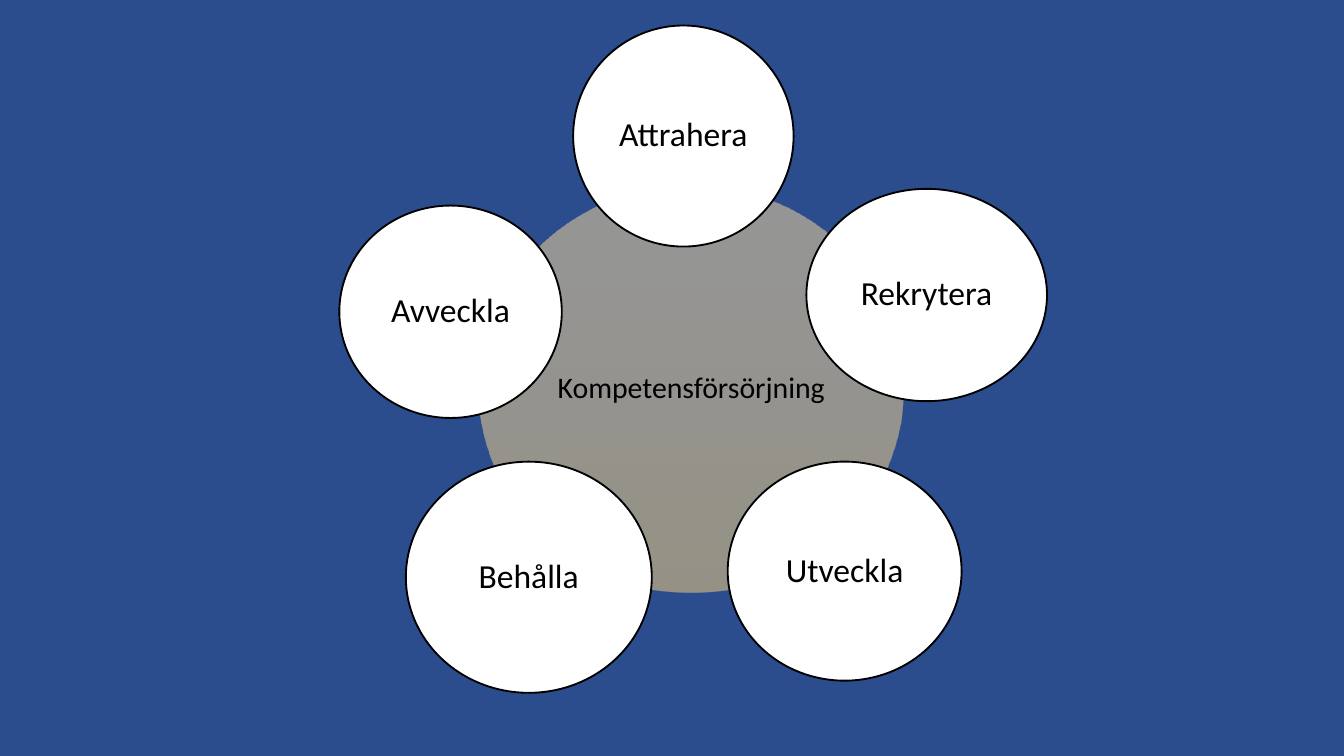
from lxml import etree
from pptx import Presentation, util as u
from pptx.dml.color import RGBColor
from pptx.enum import shapes, text
from pptx.oxml import ns

# Theme: colours and type sizes
theme = {
    "back": "2B4C8D", "disc": "FFFFFF", "ink": "000000",
    "glow": [(0, "FFE19F"), (50, "FFDC91"), (100, "FFD87D")], "alpha": 50,
    "font": "Calibri", "hub": 16, "node": 18,
}

# Grid: 100 columns by 56.25 rows of square cells (16:9)
cols, rows = 100, 56.25
cell = u.Inches(10) / cols

deck = Presentation()
deck.slide_width, deck.slide_height = int(cols * cell), int(rows * cell)
slide = deck.slides.add_slide(deck.slide_layouts[6])


def shape(kind, left, top, wide, high, fill):
    item = slide.shapes.add_shape(
        kind, *(round(n * cell) for n in (left, top, wide, high)))
    item.shadow.inherit = False
    item.line.fill.background()
    item.fill.solid()
    item.fill.fore_color.rgb = RGBColor.from_string(fill)
    return item


def label(item, words, size, inset):
    frame = item.text_frame
    frame.word_wrap = True
    frame.vertical_anchor = text.MSO_ANCHOR.MIDDLE
    frame.margin_left = frame.margin_right = u.Inches(inset)
    frame.margin_top = frame.margin_bottom = u.Inches(inset)
    para = frame.paragraphs[0]
    para.alignment = text.PP_ALIGN.CENTER
    para.line_spacing = 0.9
    run = para.add_run()
    run.text = words
    run.font.name, run.font.size = theme["font"], u.Pt(size)
    run.font.color.rgb = RGBColor.from_string(theme["ink"])


# Backdrop
shape(shapes.MSO_SHAPE.RECTANGLE, 0, 0, cols, rows, theme["back"])

# Hub with a half-transparent gradient, running downwards
oval = shapes.MSO_SHAPE.OVAL
hub = shape(oval, 35.65, 13.8, 31.6, 30.25, theme["disc"])
hub.fill.gradient()
hub.fill.gradient_angle = 270
stops = hub.element.spPr.find(".//" + ns.qn("a:gsLst"))
for old in list(stops):
    stops.remove(old)
for pos, tint in theme["glow"]:
    stop = etree.SubElement(stops, ns.qn("a:gs"), pos=str(pos * 1000))
    tone = etree.SubElement(stop, ns.qn("a:srgbClr"), val=tint)
    etree.SubElement(tone, ns.qn("a:alpha"), val=str(theme["alpha"] * 1000))
label(hub, "Kompetensförsörjning", theme["hub"], 0.02)

# Nodes, clockwise from the top: left, top, width, height
nodes = [
    ("Attrahera", 42.65, 1.9, 16.4, 16.45),
    ("Rekrytera", 60, 14.05, 17.9, 15.8),
    ("Utveckla", 54.15, 34.35, 17.4, 16.3),
    ("Behålla", 30.2, 34.35, 18.3, 17.2),
    ("Avveckla", 25.25, 15.3, 16.55, 15.8),
]
for words, *box in nodes:
    node = shape(oval, *box, theme["disc"])
    node.line.color.rgb = RGBColor.from_string(theme["ink"])
    node.line.width = u.Pt(1)
    label(node, words, theme["node"], 0.03)

deck.save("out.pptx")
